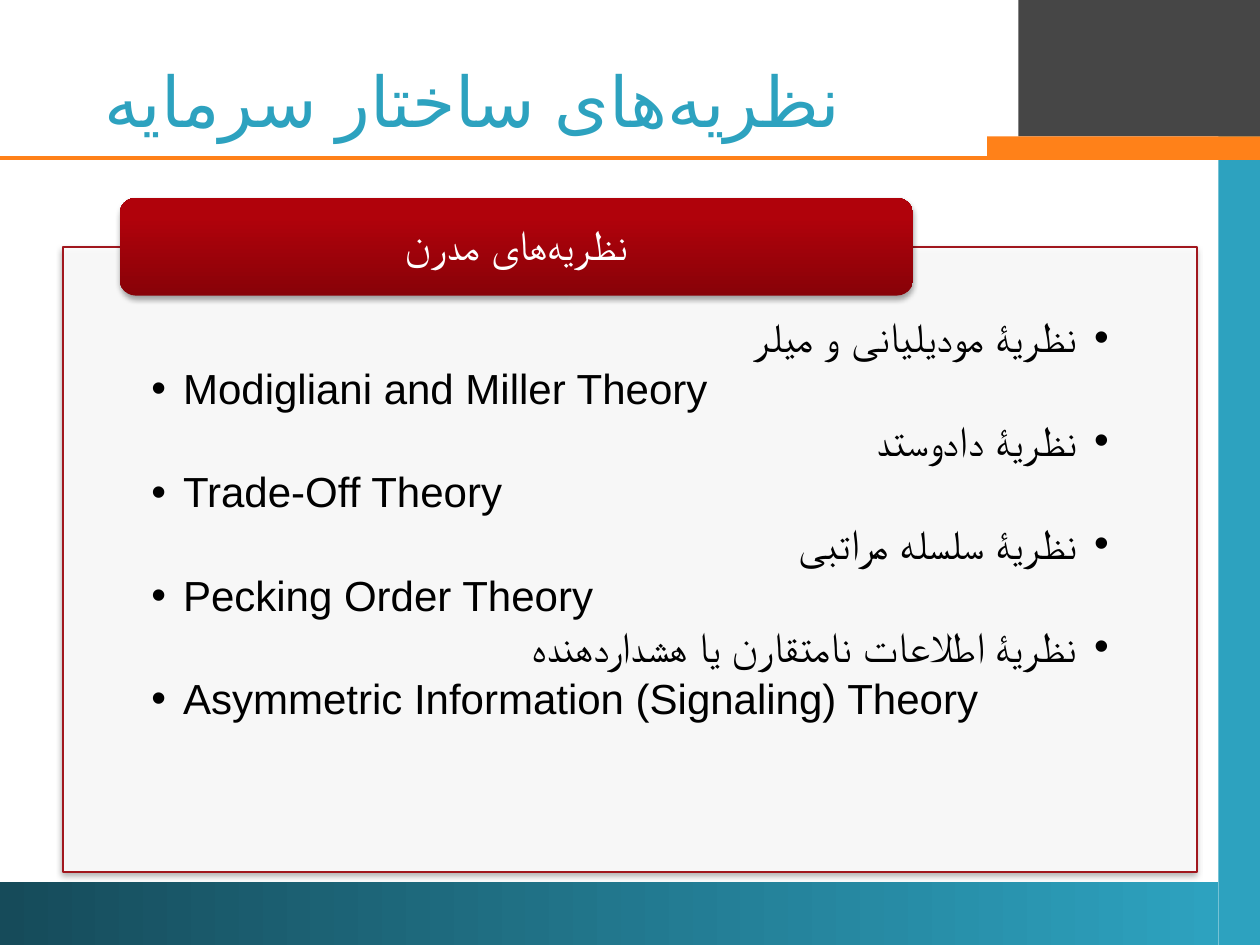
from lxml.etree import SubElement
from pptx import Presentation
from pptx.dml.color import RGBColor
from pptx.enum.shapes import MSO_CONNECTOR, MSO_SHAPE
from pptx.enum.text import MSO_ANCHOR as Anchor, MSO_AUTO_SIZE as AutoSize, PP_ALIGN as Align
from pptx.oxml import parse_xml
from pptx.oxml.ns import nsdecls, qn
from pptx.util import Cm, Pt

TEAL = RGBColor(0x2D, 0xA2, 0xBF)
DARK_TEAL = RGBColor(0x16, 0x4B, 0x5A)
GRAY = RGBColor(0x46, 0x46, 0x46)
ORANGE = RGBColor(0xFF, 0x81, 0x19)
BORDER_RED = RGBColor(0xA1, 0x17, 0x1E)
DARK_RED = RGBColor(0x88, 0x02, 0x08)
RED = RGBColor(0xB0, 0x02, 0x0B)
WHITE = RGBColor(0xFF, 0xFF, 0xFF)
BLACK = RGBColor(0, 0, 0)
FONT = "Arial"

NON_JOINER = chr(0x200C)  # Persian half-space before the plural ending
PLURAL_THEORIES = NON_JOINER.join(["نظریه", "های"])
TITLE = f"{PLURAL_THEORIES} ساختار سرمایه"
HEADING = f"{PLURAL_THEORIES} مدرن"
THEORIES = [
    ("نظریۀ مودیلیانی و میلر", "Modigliani and Miller Theory"),
    ("نظریۀ دادوستد", "Trade-Off Theory"),
    ("نظریۀ سلسله مراتبی", "Pecking Order Theory"),
    ("نظریۀ اطلاعات نامتقارن یا هشداردهنده", "Asymmetric Information (Signaling) Theory"),
]

# Boxes are left, top, width, height in centimetres
SLIDE_WIDTH, SLIDE_HEIGHT = 25.4, 19.05
RULE_TOP = 3.18
TITLE_BOX = (0, 1.27, 19.05, 1.48)
SIDE_BAR = (24.56, 0.64, 0.84, 18.41)
BOTTOM_BAR = (0, 17.78, 24.56, 1.27)
CORNER_BLOCK = (20.53, 0, 4.87, 2.75)
CORNER_TAB = (19.9, 2.75, 5.5, 0.43)
PANEL = (1.27, 4.98, 22.86, 12.6)
HEADING_BOX = (2.41, 3.99, 16, 1.97)


def place(shape, box):
    for name, value in zip(("left", "top", "width", "height"), box):
        setattr(shape, name, Cm(value))


def add_block(slide, box, color=None, gradient=None, angle=0, kind=MSO_SHAPE.RECTANGLE):
    """Add a borderless shape; gradient is two (position, colour) stops."""
    shape = slide.shapes.add_shape(kind, *map(Cm, box))
    shape.shadow.inherit = False
    shape.line.fill.background()
    if gradient:
        shape.fill.gradient()
        shape.fill.gradient_angle = angle
        for stop, (position, stop_color) in zip(shape.fill.gradient_stops, gradient):
            stop.position = position
            stop.color.rgb = stop_color
    else:
        shape.fill.solid()
        shape.fill.fore_color.rgb = color
    return shape


def add_soft_shadow(shape):
    effects = shape.element.spPr.find(qn("a:effectLst"))
    effects.append(parse_xml(
        f'<a:outerShdw {nsdecls("a")} blurRad="{Pt(3.1)}" dist="{Pt(1.8)}" dir="5400000" '
        'rotWithShape="0"><a:srgbClr val="000000"><a:alpha val="35000"/></a:srgbClr></a:outerShdw>'))


def format_frame(frame, anchor, left=0, top=0, right=0, bottom=0):
    settings = {
        "word_wrap": True, "auto_size": AutoSize.NONE, "vertical_anchor": anchor,
        "margin_left": Cm(left), "margin_top": Cm(top),
        "margin_right": Cm(right), "margin_bottom": Cm(bottom),
    }
    for name, value in settings.items():
        setattr(frame, name, value)


def write(paragraph, text, size, color, align, persian=True, **spacing):
    run = paragraph.add_run()
    run.text = text
    for name, value in {"name": FONT, "size": Pt(size), "bold": False}.items():
        setattr(run.font, name, value)
    run.font.color.rgb = color
    for name, value in {"alignment": align, **spacing}.items():
        setattr(paragraph, name, value)
    paragraph._p.get_or_add_pPr().set("rtl", "1" if persian else "0")
    if persian:
        run.font._element.set("lang", "fa-IR")
        SubElement(run.font._element, qn("a:cs"), typeface=FONT)


def add_bullet(paragraph):
    properties = paragraph._p.get_or_add_pPr()
    properties.set("marL", str(Cm(0.64)))
    properties.set("indent", str(-Cm(0.64)))
    SubElement(properties, qn("a:buFont"), typeface=FONT)
    SubElement(properties, qn("a:buChar"), char="•")


def add_frame_decor(slide):
    add_block(slide, SIDE_BAR, TEAL)
    add_block(slide, BOTTOM_BAR, gradient=[(0, DARK_TEAL), (1, TEAL)])
    add_block(slide, CORNER_BLOCK, GRAY)
    rule = slide.shapes.add_connector(
        MSO_CONNECTOR.STRAIGHT, Cm(SLIDE_WIDTH), Cm(RULE_TOP), Cm(0), Cm(RULE_TOP))
    rule.line.color.rgb = ORANGE
    rule.line.width = Pt(2.25)
    SubElement(rule.element.spPr, qn("a:effectLst"))
    add_block(slide, CORNER_TAB, ORANGE)


def add_panel(slide):
    panel = add_block(slide, PANEL, WHITE)
    panel.line.color.rgb = BORDER_RED
    panel.line.width = Pt(0.75)
    color = panel.element.spPr.find(qn("a:solidFill"))[0]
    SubElement(color, qn("a:alpha"), val="90000")
    add_soft_shadow(panel)


def fill_theories(body):
    place(body, PANEL)
    body.element.getparent().append(body.element)  # in front of the panel
    frame = body.text_frame
    format_frame(frame, Anchor.TOP, left=1.78, top=1.4, right=1.78, bottom=0.48)
    lines = [(text, persian) for pair in THEORIES for text, persian in zip(pair, (True, False))]
    for index, (text, persian) in enumerate(lines):
        paragraph = frame.add_paragraph() if index else frame.paragraphs[0]
        write(paragraph, text, 24, BLACK, Align.RIGHT if persian else Align.LEFT, persian,
              level=1, line_spacing=0.9, space_before=Pt(0), space_after=Pt(3.6))
        add_bullet(paragraph)


def add_heading(slide):
    heading = add_block(slide, HEADING_BOX, gradient=[(0, DARK_RED), (0.8, RED)], angle=90,
                        kind=MSO_SHAPE.ROUNDED_RECTANGLE)
    add_soft_shadow(heading)
    format_frame(heading.text_frame, Anchor.MIDDLE, left=0.6, right=0.6)
    write(heading.text_frame.paragraphs[0], HEADING, 24, WHITE, Align.CENTER, line_spacing=0.9)


def main():
    presentation = Presentation()
    presentation.slide_width, presentation.slide_height = Cm(SLIDE_WIDTH), Cm(SLIDE_HEIGHT)
    slide = presentation.slides.add_slide(presentation.slide_layouts[1])
    title, body = slide.placeholders
    add_frame_decor(slide)
    place(title, TITLE_BOX)
    format_frame(title.text_frame, Anchor.MIDDLE, left=0.25, right=0.25)
    write(title.text_frame.paragraphs[0], TITLE, 40, TEAL, Align.CENTER)
    add_panel(slide)
    fill_theories(body)
    add_heading(slide)
    presentation.save("out.pptx")


if __name__ == "__main__":
    main()
